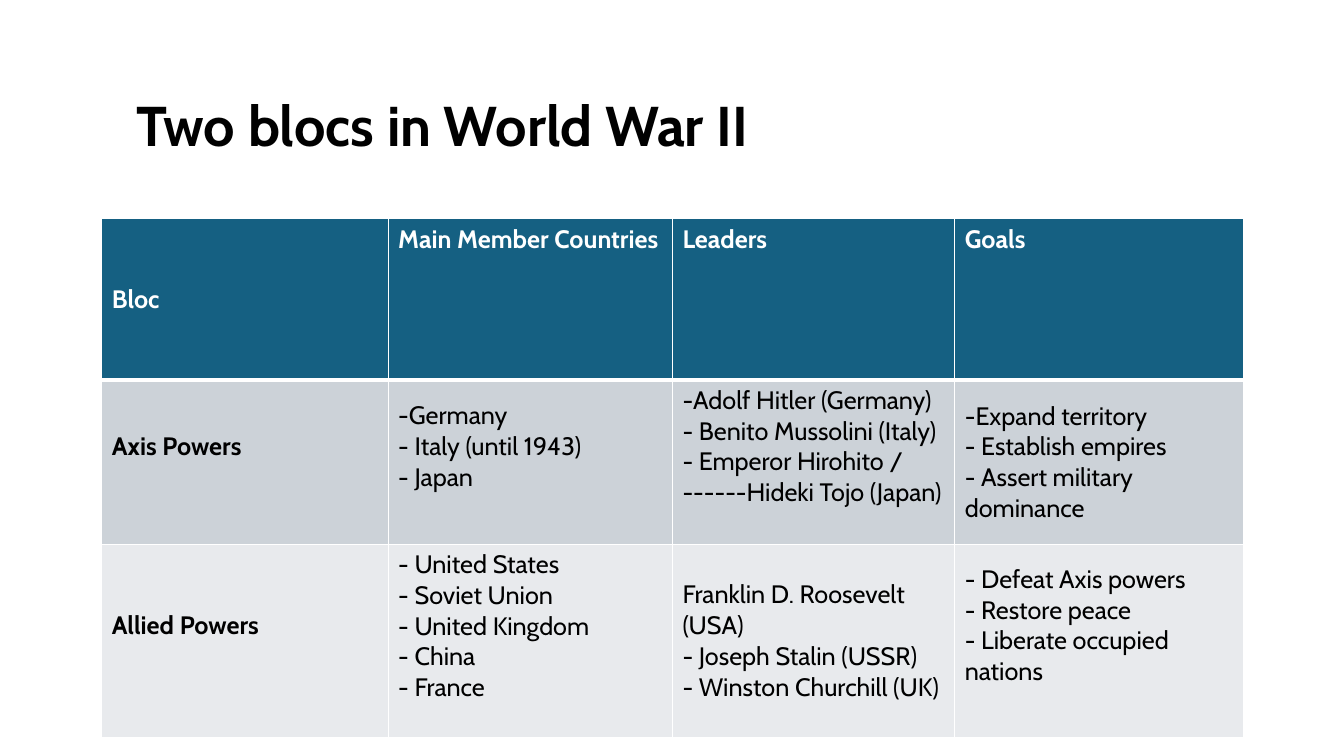
from pptx import Presentation
from pptx.util import Inches, Pt
from pptx.dml.color import RGBColor
from pptx.enum.text import MSO_ANCHOR
from pptx.oxml import parse_xml
from pptx.oxml.ns import nsdecls

TITLE = "Two blocs in World War II"
HEADER = ["Bloc", "Main Member Countries", "Leaders", "Goals"]
BLOCS = [
    [
        ["Axis Powers"],
        ["-Germany", "- Italy (until 1943)", "- Japan"],
        ["-Adolf Hitler (Germany)", "- Benito Mussolini (Italy)",
         "- Emperor Hirohito / ------Hideki Tojo (Japan)"],
        ["-Expand territory", "- Establish empires", "- Assert military dominance"],
    ],
    [
        ["Allied Powers"],
        ["- United States", "- Soviet Union", "- United Kingdom", "- China", "- France"],
        ["Franklin D. Roosevelt (USA)", "- Joseph Stalin (USSR)",
         "- Winston Churchill (UK)"],
        ["- Defeat Axis powers", "- Restore peace", "- Liberate occupied nations"],
    ],
]
ROWS = [[[label] for label in HEADER]] + BLOCS
COL_WIDTHS = [2.84, 2.82, 2.8, 2.86]
ROW_HEIGHTS = [1.6, 1.63, 1.92]
CENTRED = {(1, 3), (2, 2)}
THEME = {
    "font": "Cabin", "title_size": 40, "cell_size": 18,
    "dark": "000000", "light": "FFFFFF",
    "fills": ["156082", "CCD2D8", "E8EAED"],
    "rule": 1, "header_rule": 3,
}
PAD = 0.05
RAISED_PAD = 0.36


def add_run(p, text, size, color, bold):
    r = p.add_run()
    r.text = text
    r.font.name = THEME["font"]
    r.font.size = Pt(size)
    r.font.bold = bold
    r.font.color.rgb = RGBColor.from_string(color)


def set_borders(cell, widths):
    tc_pr = cell._tc.get_or_add_tcPr()
    for i, (side, width) in enumerate(widths.items()):
        tc_pr.insert(i, parse_xml(
            f'<a:ln{side} {nsdecls("a")} w="{Pt(width)}"><a:solidFill>'
            f'<a:srgbClr val="{THEME["light"]}"/></a:solidFill></a:ln{side}>'))


def fill_cell(cell, row, col, lines):
    header = row == 0
    cell.fill.solid()
    cell.fill.fore_color.rgb = RGBColor.from_string(THEME["fills"][row])
    top = header and col > 0
    cell.vertical_anchor = MSO_ANCHOR.TOP if top else MSO_ANCHOR.MIDDLE
    raised = not header and (row, col) not in CENTRED
    cell.margin_bottom = Inches(RAISED_PAD if raised else PAD)
    p = cell.text_frame.paragraphs[0]
    for i, line in enumerate(lines):
        if i:
            p.add_line_break()
        add_run(p, line, THEME["cell_size"], THEME["light" if header else "dark"],
                header or col == 0)
    rule, thick = THEME["rule"], THEME["header_rule"]
    set_borders(cell, {"L": rule, "R": rule,
                       "T": thick if row == 1 else rule,
                       "B": thick if header else rule})


def add_title(s):
    tf = s.shapes.add_textbox(Inches(1.26), Inches(0.89), Inches(9.58), Inches(0.77)).text_frame
    tf.word_wrap = True
    tf.vertical_anchor = MSO_ANCHOR.MIDDLE
    p = tf.paragraphs[0]
    p.line_spacing = 0.9
    add_run(p, TITLE, THEME["title_size"], THEME["dark"], True)


def add_blocs_table(s):
    table = s.shapes.add_table(len(ROWS), len(HEADER), Inches(1.01), Inches(2.17),
                               Inches(sum(COL_WIDTHS)), Inches(sum(ROW_HEIGHTS))).table
    for column, width in zip(table.columns, COL_WIDTHS):
        column.width = Inches(width)
    for row, (height, cells) in enumerate(zip(ROW_HEIGHTS, ROWS)):
        table.rows[row].height = Inches(height)
        for col, lines in enumerate(cells):
            fill_cell(table.cell(row, col), row, col, lines)


def main():
    prs = Presentation()
    prs.slide_width, prs.slide_height = Inches(13.33), Inches(7.5)
    s = prs.slides.add_slide(prs.slide_layouts[6])
    add_title(s)
    add_blocs_table(s)
    prs.save("out.pptx")


if __name__ == "__main__":
    main()
